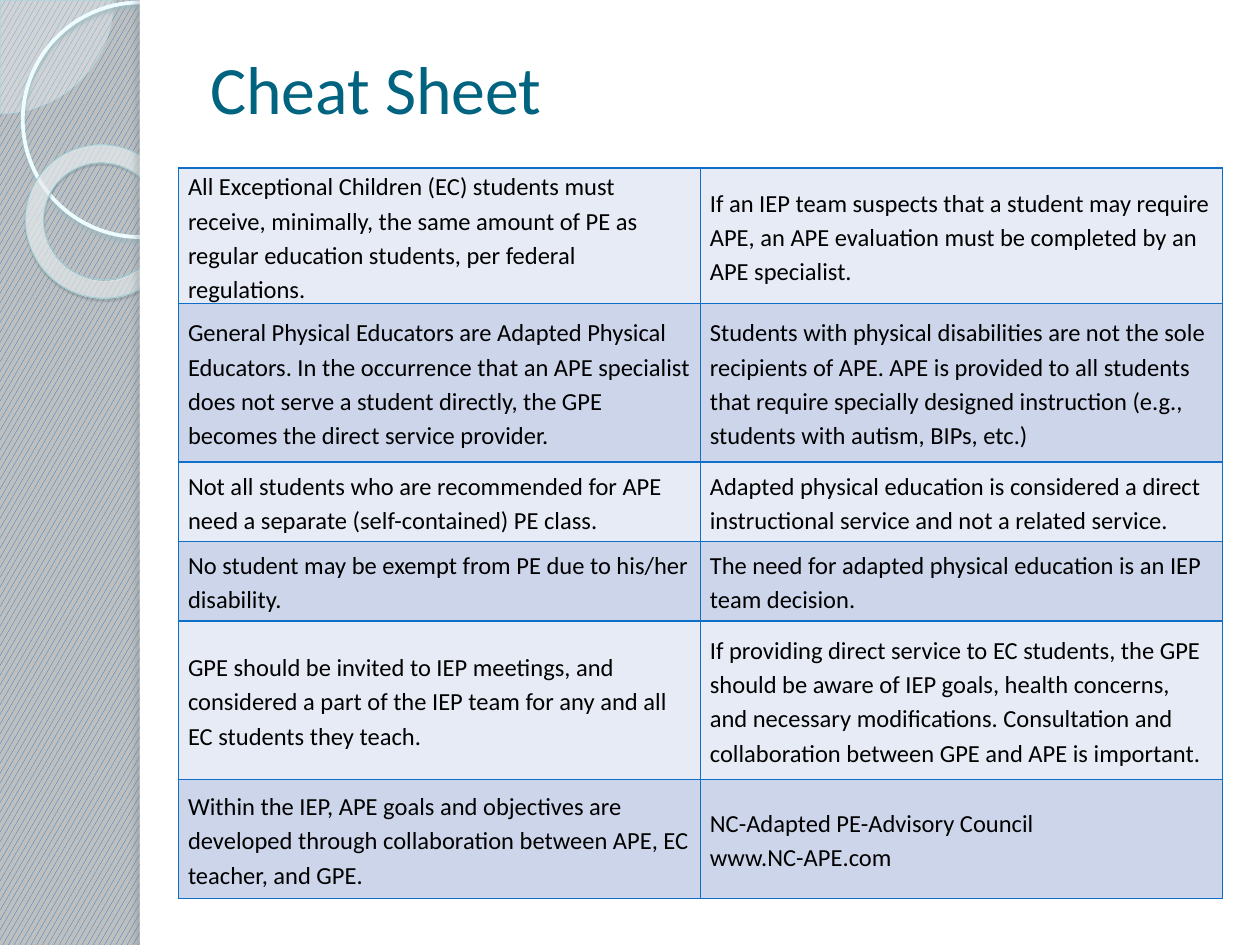
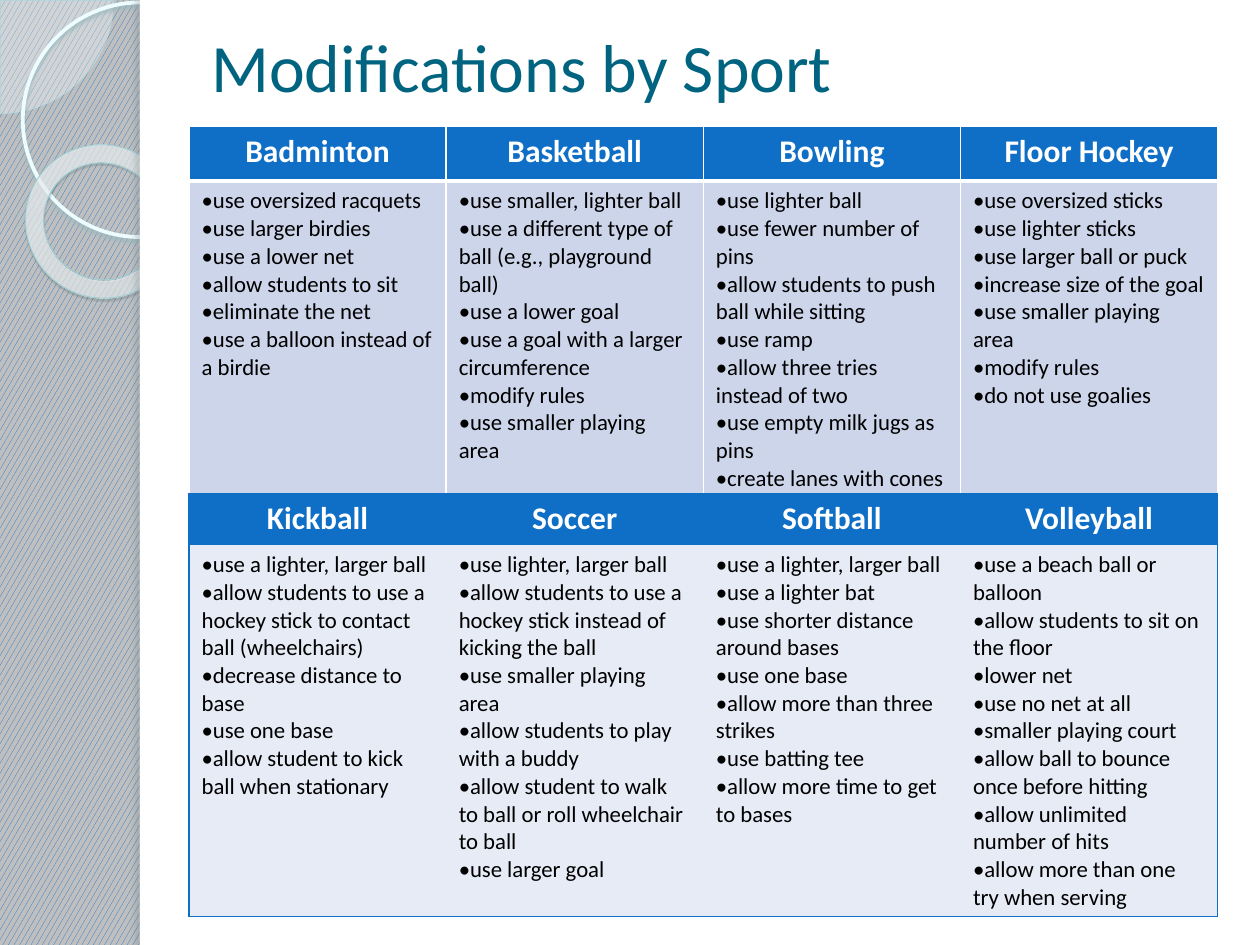
from lxml.etree import SubElement
from pptx import Presentation
from pptx.dml.color import RGBColor
from pptx.enum.dml import MSO_PATTERN
from pptx.enum.shapes import MSO_SHAPE
from pptx.enum.text import MSO_ANCHOR, PP_ALIGN
from pptx.oxml import parse_xml
from pptx.oxml.ns import nsdecls, qn
from pptx.util import Cm, Pt

FONT = "Calibri"
SLIDE_W, SLIDE_H = 25.4, 19.05
PANEL_X = 2.82
COLORS = {
    "blue": "0F6FC6", "grey": "BFBFBF", "white": "FFFFFF", "black": "000000",
    "title": "00637F", "band": "CCD5EA", "pale": "E7EBF5",
    "pie": "F8FEFF", "pie_line": "AFDBE2", "ring": "EDFCFF", "ring_shadow": "9CB9BE",
    "donut_in": "F9FEFF", "donut_mid": "FDFFFF", "donut_out": "9EF2FF",
    "donut_line": "A1CFD6", "donut_shadow": "4B5E61", "edge_shadow": "6C7A7C",
}

FACTS = [
    (["All Exceptional Children (EC) students must receive, minimally, the same amount of PE "
      "as regular education students, per federal regulations."],
     ["If an IEP team suspects that a student may require APE, an APE evaluation must be "
      "completed by an APE specialist."]),
    (["General Physical Educators are Adapted Physical Educators. In the occurrence that an APE "
      "specialist does not serve a student directly, the GPE becomes the direct service provider."],
     ["Students with physical disabilities are not the sole recipients of APE. APE is provided to "
      "all students that require specially designed instruction (e.g., students with autism, "
      "BIPs, etc.)"]),
    (["Not all students who are recommended for APE need a separate (self-contained) PE class."],
     ["Adapted physical education is considered a direct instructional service and not a "
      "related service."]),
    (["No student may be exempt from PE due to his/her disability."],
     ["The need for adapted physical education is an IEP team decision."]),
    (["GPE should be invited to IEP meetings, and considered a part of the IEP team for any and "
      "all EC students they teach."],
     ["If providing direct service to EC students, the GPE should be aware of IEP goals, health "
      "concerns, and necessary modifications. Consultation and collaboration between GPE and APE "
      "is important."]),
    (["Within the IEP, APE goals and objectives are developed through collaboration between APE, "
      "EC teacher, and GPE."],
     ["NC-Adapted PE-Advisory Council", "www.NC-APE.com"]),
]
FACT_HEIGHTS = [2.54, 3.2, 1.6, 1.6, 3.2, 2.4]

INDOOR_SPORTS = {
    "Badminton": ["use oversized racquets", "use larger birdies", "use a lower net",
                  "allow students to sit", "eliminate the net",
                  "use a balloon instead of a birdie"],
    "Basketball": ["use smaller, lighter ball",
                   "use a different type of ball (e.g., playground ball)", "use a lower goal",
                   "use a goal with a larger circumference", "modify rules",
                   "use smaller playing area"],
    "Bowling": ["use lighter ball", "use fewer number of pins",
                "allow students to push ball while sitting", "use ramp",
                "allow three tries instead of two", "use empty milk jugs as pins",
                "create lanes with cones"],
    "Floor Hockey": ["use oversized sticks", "use lighter sticks", "use larger ball or puck",
                     "increase size of the goal", "use smaller playing area", "modify rules",
                     "do not use goalies"],
}
FIELD_SPORTS = {
    "Kickball": ["use a lighter, larger ball",
                 "allow students to use a hockey stick to contact ball (wheelchairs)",
                 "decrease distance to base", "use one base",
                 "allow student to kick ball when stationary"],
    "Soccer": ["use lighter, larger ball",
               "allow students to use a hockey stick instead of kicking the ball",
               "use smaller playing area", "allow students to play with a buddy",
               "allow student to walk to ball or roll wheelchair to ball", "use larger goal"],
    "Softball": ["use a lighter, larger ball", "use a lighter bat",
                 "use shorter distance around bases", "use one base",
                 "allow more than three strikes", "use batting tee",
                 "allow more time to get to bases"],
    "Volleyball": ["use a beach ball or balloon", "allow students to sit on the floor",
                   "lower net", "use no net at all", "smaller playing court",
                   "allow ball to bounce once before hitting",
                   "allow unlimited number of hits", "allow more than one try when serving"],
}


def rgb(name):
    return RGBColor.from_string(COLORS[name])


def write(frame, lines, size, color="black", bold=False, align=PP_ALIGN.LEFT,
          spacing=None, bullet=None):
    """Fill a text frame with one paragraph per line."""
    for index, line in enumerate(lines):
        paragraph = frame.paragraphs[0] if index == 0 else frame.add_paragraph()
        paragraph.alignment = align
        if spacing:
            paragraph.line_spacing = spacing
        if bullet:
            properties = paragraph._p.get_or_add_pPr()
            properties.set("marL", "0")
            properties.set("indent", "0")
            SubElement(properties, qn("a:buFont")).set("typeface", FONT)
            SubElement(properties, qn("a:buChar")).set("char", bullet)
        run = paragraph.add_run()
        run.text = line
        font = run.font
        font.name, font.size, font.bold = FONT, Pt(size), bold
        font.color.rgb = rgb(color)


def add_ornament(slide, preset, box, fill=None, line=None, shadow=None):
    """line is (colour, points); shadow is (colour, opacity %, blur, distance, degrees)."""
    shape = slide.shapes.add_shape(preset, *map(Cm, box))
    if fill:
        shape.fill.solid()
        shape.fill.fore_color.rgb = rgb(fill)
    else:
        shape.fill.background()
    if line:
        shape.line.color.rgb = rgb(line[0])
        shape.line.width = Pt(line[1])
    else:
        shape.line.fill.background()
    shape.shadow.inherit = False
    if shadow:
        color, opacity, blur, distance, angle = shadow
        shape._element.spPr.find(qn("a:effectLst")).append(parse_xml(
            f'<a:outerShdw {nsdecls("a")} blurRad="{Pt(blur)}" dist="{Pt(distance)}" '
            f'dir="{angle * 60000}" algn="tl" rotWithShape="0"><a:srgbClr val="{COLORS[color]}">'
            f'<a:alpha val="{opacity * 1000}"/></a:srgbClr></a:outerShdw>'))
    return shape


def add_glow_fill(donut):
    """Replace the solid fill by a translucent circular gradient."""
    stops = "".join(
        f'<a:gs pos="{position * 1000}"><a:srgbClr val="{COLORS[color]}">'
        f'<a:alpha val="{opacity * 1000}"/></a:srgbClr></a:gs>'
        for position, color, opacity in
        [(0, "donut_in", 70), (70, "donut_mid", 55), (100, "donut_out", 60)])
    properties = donut._element.spPr
    properties.replace(properties.find(qn("a:solidFill")), parse_xml(
        f'<a:gradFill {nsdecls("a")} rotWithShape="1"><a:gsLst>{stops}</a:gsLst>'
        '<a:path path="circle"><a:fillToRect l="-408000" t="-50000" r="508000" b="150000"/>'
        '</a:path></a:gradFill>'))


def add_backdrop(slide):
    background = slide.background.fill
    background.patterned()
    background.pattern = MSO_PATTERN.LARGE_CONFETTI
    background.fore_color.rgb = rgb("blue")
    background.back_color.rgb = rgb("grey")

    quarter = add_ornament(slide, MSO_SHAPE.PIE, (-2.27, -2.27, 4.56, 4.56),
                           fill="pie", line=("pie_line", 0.25))
    quarter.adjustments[0], quarter.adjustments[1] = 0, 54.02
    tint = quarter._element.spPr.find(qn("a:solidFill"))[0]
    SubElement(tint, qn("a:alpha")).set("val", "33000")

    add_ornament(slide, MSO_SHAPE.OVAL, (0.46, 0.05, 4.73, 4.73),
                 line=("ring", 2.15), shadow=("ring_shadow", 85, 2, 2, 90))
    donut = add_ornament(slide, MSO_SHAPE.DONUT, (0.5, 2.93, 3.13, 3.07), fill="donut_in",
                         line=("donut_line", 0.58), shadow=("donut_shadow", 35, 1, 1.2, 75))
    donut.adjustments[0] = 0.12
    donut.rotation = 38.6
    add_glow_fill(donut)

    add_ornament(slide, MSO_SHAPE.RECTANGLE, (PANEL_X, 0, SLIDE_W - PANEL_X, SLIDE_H),
                 fill="white")
    add_ornament(slide, MSO_SHAPE.RECTANGLE, (PANEL_X, 0, 0.2, SLIDE_H),
                 fill="white", shadow=("edge_shadow", 25, 3, 3, 180))


def add_title(slide, text, box):
    frame = slide.shapes.add_textbox(*map(Cm, box)).text_frame
    frame.word_wrap = True
    frame.vertical_anchor = MSO_ANCHOR.MIDDLE
    write(frame, [text], size=38.7, color="title")


def add_grid(slide, left, top, column_width, columns, row_heights):
    table = slide.shapes.add_table(
        len(row_heights), columns, Cm(left), Cm(top),
        Cm(column_width * columns), Cm(sum(row_heights))).table
    table.first_row = table.horz_banding = False
    for column in table.columns:
        column.width = Cm(column_width)
    for row, height in zip(table.rows, row_heights):
        row.height = Cm(height)
    return table


def paint_cell(cell, fill, line, **widths):
    """Fill a cell and draw the borders whose widths (L, R, T, B) are given."""
    properties = cell._tc.get_or_add_tcPr()
    for side in "LRTB":
        border = SubElement(properties, qn(f"a:ln{side}"))
        if side in widths:
            border.set("w", str(Pt(widths[side])))
            paint = SubElement(border, qn("a:solidFill"))
            SubElement(paint, qn("a:srgbClr")).set("val", COLORS[line])
        else:
            SubElement(border, qn("a:noFill"))
    cell.fill.solid()
    cell.fill.fore_color.rgb = rgb(fill)


def add_fact_table(slide, left, top, column_width):
    table = add_grid(slide, left, top, column_width, 2, FACT_HEIGHTS)
    for row, facts in enumerate(FACTS):
        for column, lines in enumerate(facts):
            cell = table.cell(row, column)
            cell.margin_left = cell.margin_right = Cm(0.19)
            cell.margin_top = cell.margin_bottom = 0
            cell.vertical_anchor = MSO_ANCHOR.MIDDLE
            paint_cell(cell, "band" if row % 2 else "pale", "blue", L=1, R=1, T=1, B=1)
            write(cell.text_frame, lines, size=14, spacing=1.15)


def add_sport_table(slide, sports, left, top, column_width, row_heights, fill, line,
                    inner_lines, rule):
    """inner_lines draws lines between columns; rule is the line width under the header."""
    table = add_grid(slide, left, top, column_width, len(sports), row_heights)
    for column, (sport, changes) in enumerate(sports.items()):
        sides = {}
        if inner_lines or column == 0:
            sides["L"] = 1
        if inner_lines or column == len(sports) - 1:
            sides["R"] = 1
        header, body = table.cell(0, column), table.cell(1, column)
        paint_cell(header, "blue", line, T=1, B=rule, **sides)
        write(header.text_frame, [sport], size=18, color="white", bold=True,
              align=PP_ALIGN.CENTER)
        paint_cell(body, fill, line, T=rule, B=1, **sides)
        write(body.text_frame, changes, size=13, bullet="•")


def add_cheat_sheet(slide):
    add_backdrop(slide)
    add_title(slide, "Cheat Sheet", (3.99, 0.78, 20.83, 1.98))
    add_fact_table(slide, 3.6, 3.39, 10.52)


def add_modifications(slide):
    add_backdrop(slide)
    add_sport_table(slide, INDOOR_SPORTS, 3.81, 2.54, 5.185, [1.11, 6.51],
                    fill="band", line="white", inner_lines=True, rule=3)
    add_sport_table(slide, FIELD_SPORTS, 3.81, 9.95, 5.185, [1.03, 7.5],
                    fill="pale", line="blue", inner_lines=False, rule=1)
    add_title(slide, "Modifications by Sport", (4.01, 0.43, 20.83, 1.78))


def main():
    deck = Presentation()
    deck.slide_width, deck.slide_height = Cm(SLIDE_W), Cm(SLIDE_H)
    for build in (add_cheat_sheet, add_modifications):
        build(deck.slides.add_slide(deck.slide_layouts[6]))
    deck.save("out.pptx")


if __name__ == "__main__":
    main()
